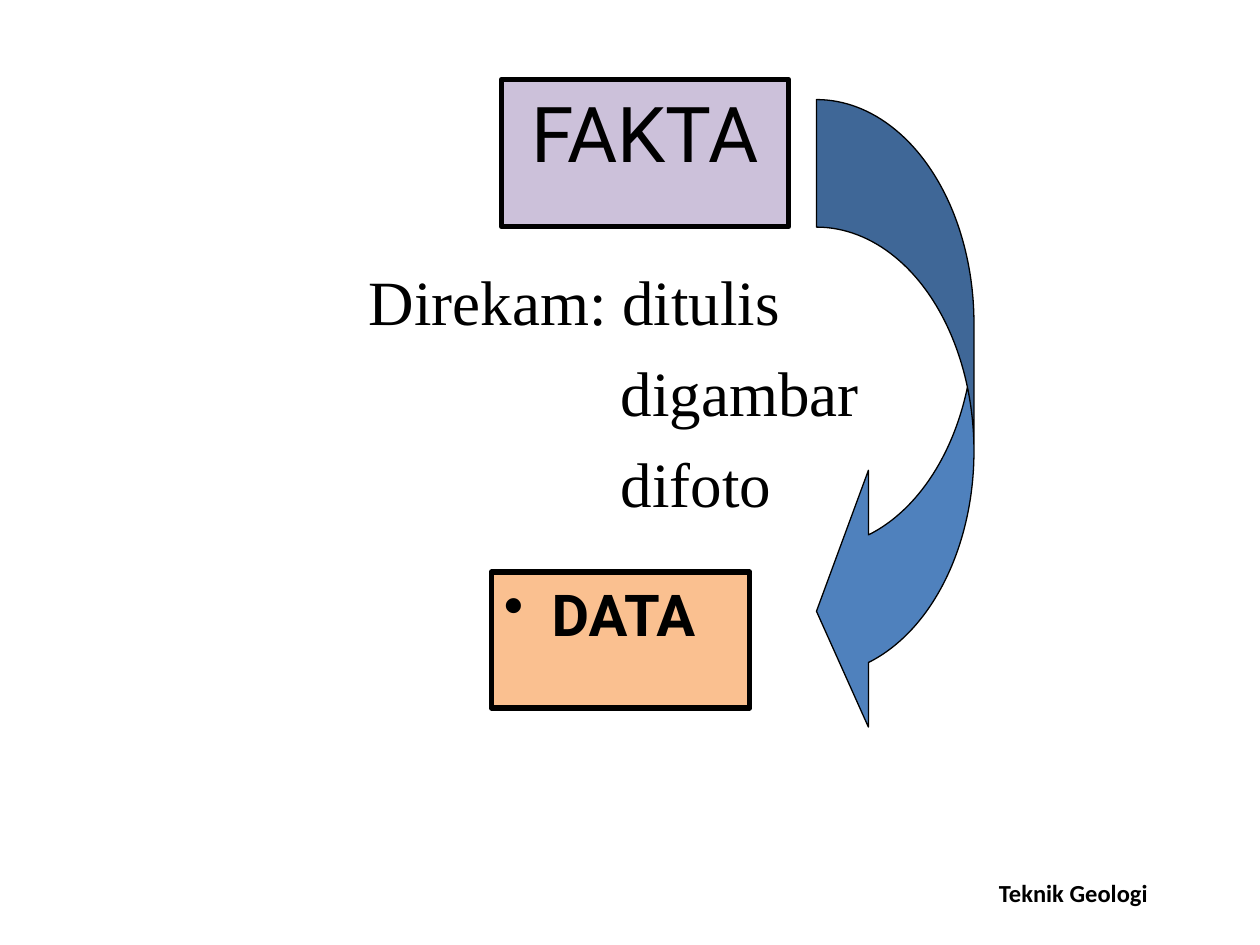
from dataclasses import dataclass

from lxml import etree
from pptx import Presentation
from pptx.dml.color import RGBColor
from pptx.enum.shapes import MSO_SHAPE
from pptx.enum.text import MSO_ANCHOR, MSO_AUTO_SIZE, PP_ALIGN
from pptx.oxml.ns import qn
from pptx.util import Inches, Pt

RECT = MSO_SHAPE.RECTANGLE
ARROW = MSO_SHAPE.CURVED_LEFT_ARROW
LEFT, CENTER = PP_ALIGN.LEFT, PP_ALIGN.CENTER
TOP = MSO_ANCHOR.TOP
FIXED = MSO_AUTO_SIZE.NONE


@dataclass(frozen=True)
class Theme:
    ink: str = "000000"
    fact: str = "CCC1DA"
    data: str = "FAC090"
    arrow: str = "4F81BD"
    head: str = "Roboto"
    body: str = "Times New Roman"
    foot: str = "Calibri"
    title_size: int = 44
    data_size: int = 33
    body_size: int = 36
    foot_size: int = 14
    border: float = 3
    thin: float = 0.75


def write(frame, lines, font, size, color, bold=False, align=LEFT,
          indents=(0,), gap=0, bullet=None):
    """Fill a frame; indents holds one left margin in inches per line."""
    frame.word_wrap = True
    frame.auto_size = FIXED
    frame.vertical_anchor = TOP
    for i, (line, indent) in enumerate(zip(lines, indents)):
        para = frame.paragraphs[0] if i == 0 else frame.add_paragraph()
        para.alignment = align
        para.space_before = Pt(gap if i else 0)
        props = para._p.get_or_add_pPr()
        props.set("marL", str(Inches(indent)))
        if bullet:
            props.set("indent", str(-Inches(indent)))
            etree.SubElement(props, qn("a:buChar")).set("char", bullet)
        run = para.add_run()
        run.text = line
        run.font.name = font
        run.font.size = Pt(size)
        run.font.bold = bold
        run.font.color.rgb = RGBColor.from_string(color)


class Board:
    """Holds the theme and the slide being built."""

    def __init__(self, slide, theme):
        self.slide = slide
        self.theme = theme

    def paint(self, shape, fill, width):
        shape.fill.solid()
        shape.fill.fore_color.rgb = RGBColor.from_string(fill)
        shape.line.color.rgb = RGBColor.from_string(self.theme.ink)
        shape.line.width = Pt(width)

    def title(self, text, box, fill, **style):
        shape = self.slide.shapes.title
        shape.left, shape.top, shape.width, shape.height = map(Inches, box)
        self.paint(shape, fill, self.theme.border)
        write(shape.text_frame, [text], color=self.theme.ink, **style)

    def shape(self, kind, box, fill, width):
        shape = self.slide.shapes.add_shape(kind, *map(Inches, box))
        shape.shadow.inherit = False
        self.paint(shape, fill, width)
        return shape

    def card(self, text, box, fill, **style):
        shape = self.shape(RECT, box, fill, self.theme.border)
        write(shape.text_frame, [text], color=self.theme.ink, **style)

    def text(self, lines, box, inset=0.05, **style):
        frame = self.slide.shapes.add_textbox(*map(Inches, box)).text_frame
        frame.margin_top = Inches(inset)
        write(frame, lines, color=self.theme.ink, **style)

    def arrow(self, box, fill, bends):
        shape = self.shape(ARROW, box, fill, self.theme.thin)
        for i, bend in enumerate(bends):
            shape.adjustments[i] = bend


def main():
    deck = Presentation()
    deck.slide_width, deck.slide_height = Inches(10), Inches(7.5)
    theme = Theme()
    board = Board(deck.slides.add_slide(deck.slide_layouts[5]), theme)

    board.text(["Teknik Geologi"], (7.83, 6.92, 1.5, 0.33),
               font=theme.foot, size=theme.foot_size, bold=True)
    board.title("FAKTA", (3.98, 0.63, 2.28, 1.17), theme.fact,
                font=theme.head, size=theme.title_size, align=CENTER)
    board.card("DATA", (3.9, 4.54, 2.05, 1.08), theme.data,
               font=theme.head, size=theme.data_size, bold=True,
               indents=(0.38,), bullet="•")
    board.text(["Direkam: ditulis", "digambar", "difoto"],
               (1.07, 1.96, 7, 1.92), inset=0.12,
               font=theme.body, size=theme.body_size,
               indents=(1.76, 3.76, 3.76), gap=9)
    board.arrow((6.48, 0.79, 1.25, 5.08), theme.arrow, (0.81, 1.63, 0.33))

    deck.save("out.pptx")


if __name__ == "__main__":
    main()
